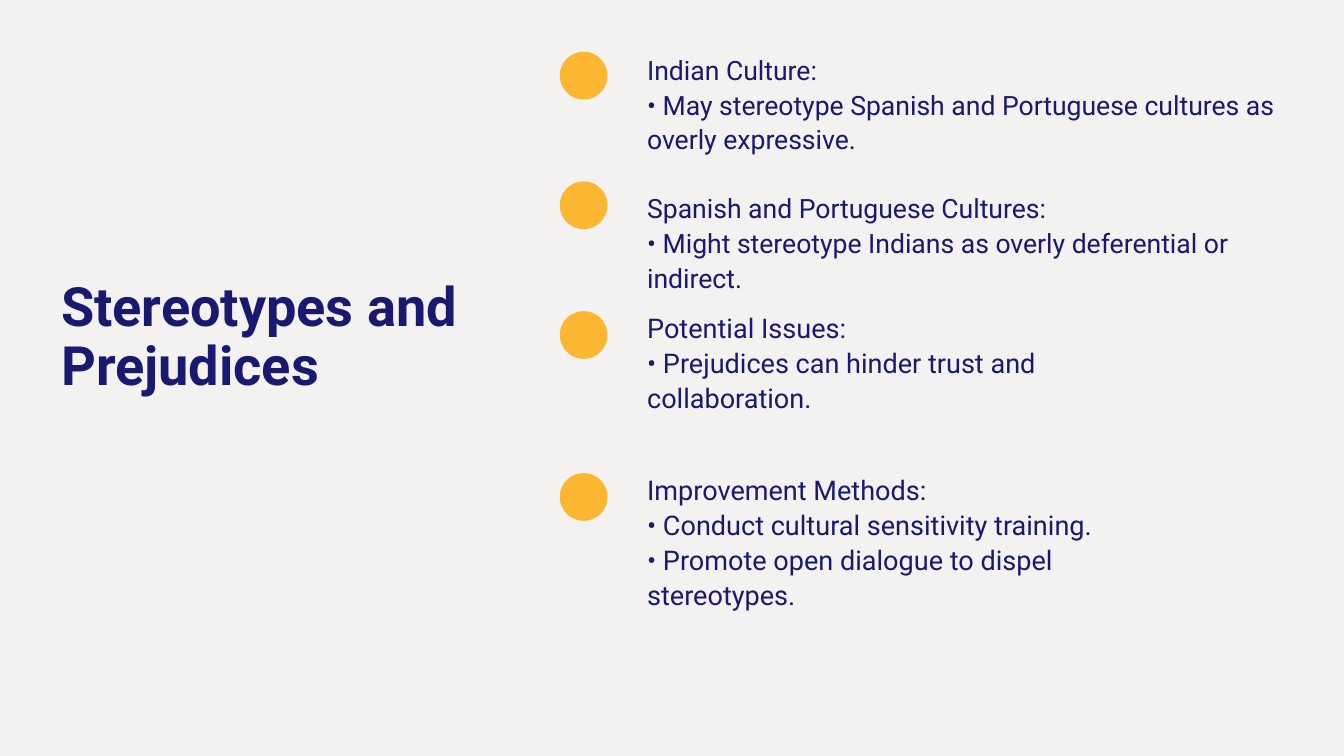
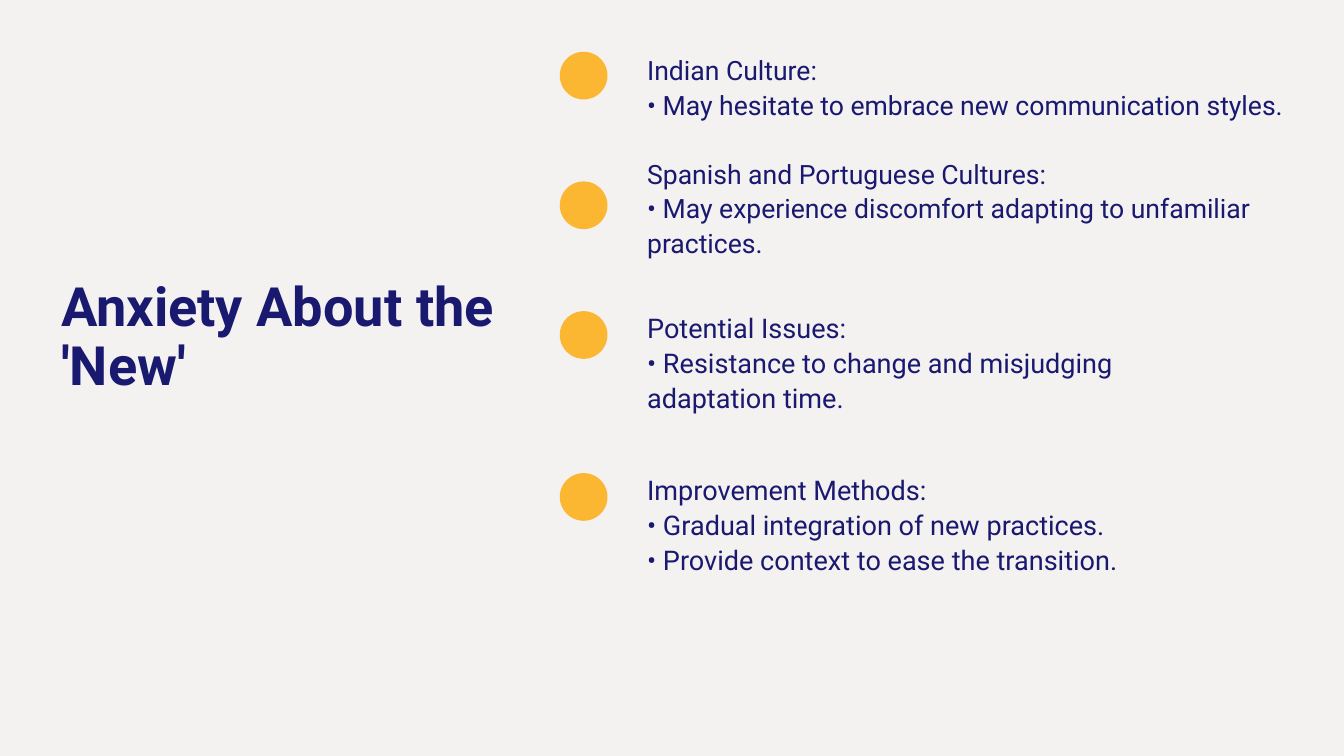
from dataclasses import dataclass

from lxml.etree import SubElement
from pptx import Presentation
from pptx.dml.color import RGBColor
from pptx.enum.shapes import MSO_SHAPE
from pptx.enum.text import MSO_ANCHOR, MSO_AUTO_SIZE, PP_ALIGN
from pptx.oxml.ns import qn
from pptx.util import Inches, Pt


@dataclass(frozen=True)
class Theme:
    background: RGBColor = RGBColor(0xF4, 0xF1, 0xF1)
    navy: RGBColor = RGBColor(0x19, 0x19, 0x70)
    amber: RGBColor = RGBColor(0xFB, 0xB7, 0x31)
    font: str = "Roboto"
    title_size: float = 58
    title_leading: float = 63.8
    culture_size: float = 28.5
    culture_leading: float = 37.1
    advice_size: float = 29
    advice_leading: float = 37.7


@dataclass(frozen=True)
class TextArea:
    left: float
    top: float
    width: float
    height: float
    size: float
    leading: float
    bold: bool = False


@dataclass(frozen=True)
class Topic:
    heading: str
    points: tuple[str, ...]


@dataclass(frozen=True)
class Barrier:
    title: str
    indian: str
    iberian: str
    issue: str
    methods: tuple[str, ...]


THEME = Theme()

# Text areas shared by both slides
TITLE_AREA = TextArea(0.91, 4.13, 6.72, 1.79, THEME.title_size, THEME.title_leading, True)
CULTURES_AREA = TextArea(9.63, 0.76, 9.74, 3.6, THEME.culture_size, THEME.culture_leading)
ISSUES_AREA = TextArea(9.63, 4.59, 8.22, 1.56, THEME.advice_size, THEME.advice_leading)
METHODS_AREA = TextArea(9.63, 7, 7.5, 2.08, THEME.advice_size, THEME.advice_leading)

# Topic markers: three at an equal step, the last beside the methods
MARKER_LEFT, MARKER_SIZE = 8.33, 0.71
MARKER_TOPS = [0.77 + 1.93 * row for row in range(3)] + [7.04]

COMPARISON_LAYOUT = 4
CULTURES_IDX, ISSUES_IDX, METHODS_IDX, SPARE_IDX = 1, 2, 3, 4

BARRIERS = (
    Barrier(
        "Stereotypes and Prejudices",
        "May stereotype Spanish and Portuguese cultures as overly expressive.",
        "Might stereotype Indians as overly deferential or indirect.",
        "Prejudices can hinder trust and collaboration.",
        ("Conduct cultural sensitivity training.",
         "Promote open dialogue to dispel stereotypes."),
    ),
    Barrier(
        "Anxiety About the 'New'",
        "May hesitate to embrace new communication styles.",
        "May experience discomfort adapting to unfamiliar practices.",
        "Resistance to change and misjudging adaptation time.",
        ("Gradual integration of new practices.",
         "Provide context to ease the transition."),
    ),
)


def set_attributes(target, values: dict) -> None:
    for name, value in values.items():
        setattr(target, name, value)


def place(holder, area: TextArea) -> None:
    set_attributes(holder, {
        "left": Inches(area.left), "top": Inches(area.top),
        "width": Inches(area.width), "height": Inches(area.height),
    })
    set_attributes(holder.text_frame, {
        "margin_left": 0, "margin_top": 0, "margin_right": 0, "margin_bottom": 0,
        "word_wrap": True, "vertical_anchor": MSO_ANCHOR.TOP,
        "auto_size": MSO_AUTO_SIZE.SHAPE_TO_FIT_TEXT,
    })


def write_line(paragraph, text: str, area: TextArea, gap: float = 0) -> None:
    set_attributes(paragraph, {
        "alignment": PP_ALIGN.LEFT, "line_spacing": Pt(area.leading),
        "space_before": Pt(gap), "space_after": Pt(0),
    })
    # Clear the template's bullet and hanging indent
    properties = paragraph._p.get_or_add_pPr()
    properties.set("marL", "0")
    properties.set("indent", "0")
    SubElement(properties, qn("a:buNone"))
    run = paragraph.add_run()
    run.text = text
    set_attributes(run.font, {"name": THEME.font, "size": Pt(area.size), "bold": area.bold})
    run.font.color.rgb = THEME.navy


def write_topics(holder, area: TextArea, topics: list[Topic]) -> None:
    place(holder, area)
    frame = holder.text_frame
    for number, topic in enumerate(topics):
        heading = frame.add_paragraph() if number else frame.paragraphs[0]
        # One line of space separates topics
        write_line(heading, topic.heading, area, area.leading if number else 0)
        for point in topic.points:
            write_line(frame.add_paragraph(), f"• {point}", area)


def add_marker(slide, top: float) -> None:
    marker = slide.shapes.add_shape(
        MSO_SHAPE.OVAL, Inches(MARKER_LEFT), Inches(top),
        Inches(MARKER_SIZE), Inches(MARKER_SIZE))
    marker.shadow.inherit = False
    marker.fill.solid()
    marker.fill.fore_color.rgb = THEME.amber
    marker.line.fill.background()


def add_barrier_slide(deck, barrier: Barrier) -> None:
    slide = deck.slides.add_slide(deck.slide_layouts[COMPARISON_LAYOUT])
    holders = {holder.placeholder_format.idx: holder for holder in slide.placeholders}
    spare = holders[SPARE_IDX].element
    spare.getparent().remove(spare)

    # Title
    title = slide.shapes.title
    place(title, TITLE_AREA)
    write_line(title.text_frame.paragraphs[0], barrier.title, TITLE_AREA)

    # Topics
    write_topics(holders[CULTURES_IDX], CULTURES_AREA, [
        Topic("Indian Culture:", (barrier.indian,)),
        Topic("Spanish and Portuguese Cultures:", (barrier.iberian,)),
    ])
    write_topics(holders[ISSUES_IDX], ISSUES_AREA,
                 [Topic("Potential Issues:", (barrier.issue,))])
    write_topics(holders[METHODS_IDX], METHODS_AREA,
                 [Topic("Improvement Methods:", barrier.methods)])

    # Markers
    for top in MARKER_TOPS:
        add_marker(slide, top)


def main() -> None:
    deck = Presentation()
    set_attributes(deck, {"slide_width": Inches(20), "slide_height": Inches(11.25)})
    backdrop = deck.slide_master.background.fill
    backdrop.solid()
    backdrop.fore_color.rgb = THEME.background
    for barrier in BARRIERS:
        add_barrier_slide(deck, barrier)
    deck.save("out.pptx")


if __name__ == "__main__":
    main()
